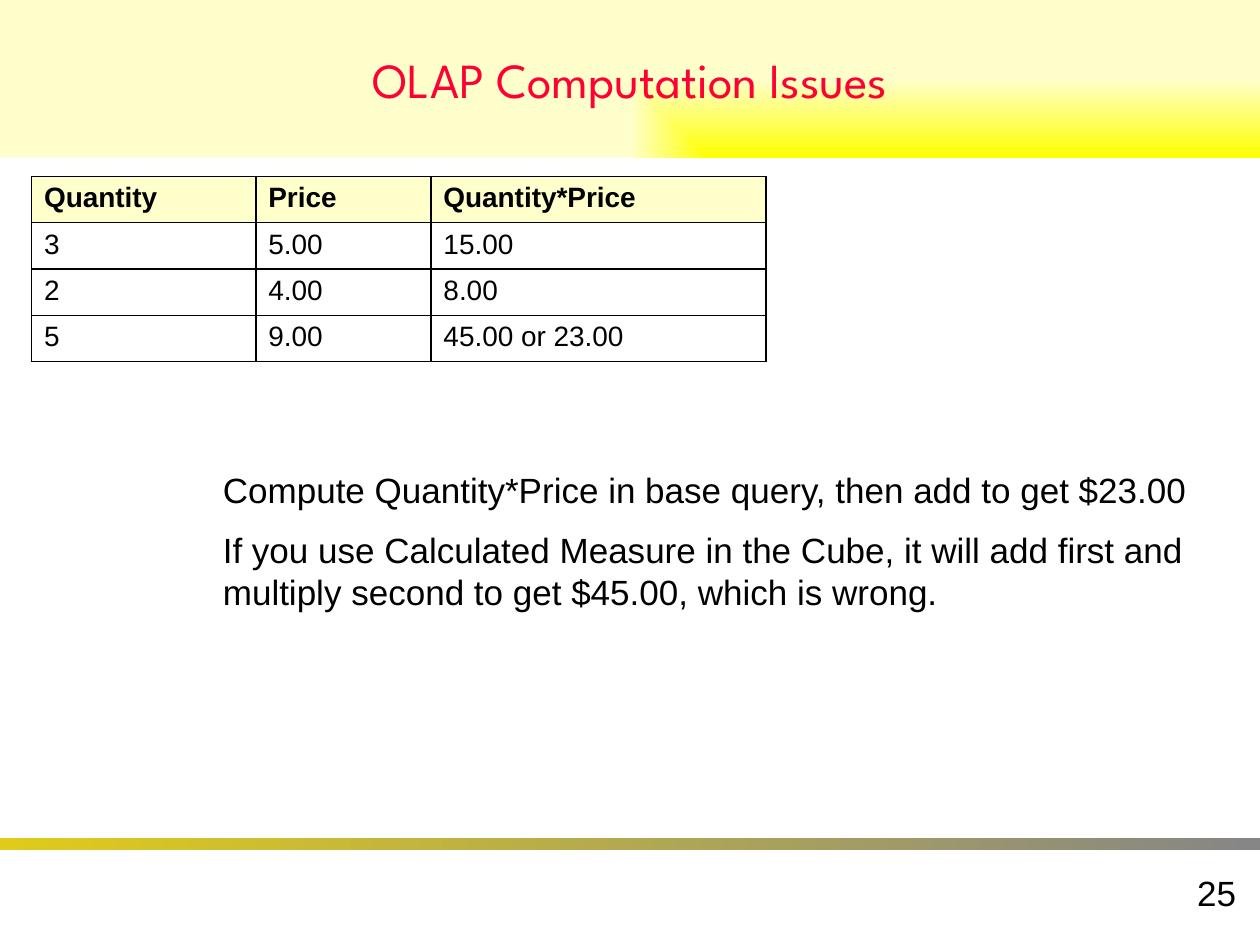
from pptx import Presentation
from pptx.dml.color import RGBColor
from pptx.enum.shapes import MSO_SHAPE as Shape
from pptx.enum.text import MSO_ANCHOR as Anchor, MSO_AUTO_SIZE as Fit, PP_ALIGN as Align
from pptx.oxml.ns import qn
from pptx.util import Inches, Pt
from lxml.etree import SubElement as Sub

COLS, ROWS = 40, 30
CELL = Inches(0.25)


def color(code):
    return RGBColor.from_string(code)


def write(frame, text, font="Arial", size=20, ink="000000", bold=False,
          align=Align.LEFT, gap=0, hang=0):
    """Fill a frame, one paragraph a line; gap is in points, hang in inches."""
    for i, line in enumerate(text.split("\n")):
        para = frame.add_paragraph() if i else frame.paragraphs[0]
        para.alignment = align
        para.space_before = Pt(gap if i else 0)
        if hang:
            props = para._p.get_or_add_pPr()
            props.set("marL", str(Inches(hang)))
            props.set("indent", str(-Inches(hang)))
        run = para.add_run()
        run.text = line
        run.font.name, run.font.size, run.font.bold = font, Pt(size), bold
        run.font.color.rgb = color(ink)


def blend(fill, first, last, corner=False):
    """Fade left to right, or outward from the bottom right corner."""
    fill.gradient()
    fill.gradient_angle = 0
    for stop, code in zip(fill.gradient_stops, (first, last)):
        stop.color.rgb = color(code)
    if corner:
        grad = fill._fill._gradFill
        grad.remove(grad.find(qn("a:lin")))
        way = Sub(grad, qn("a:path"), path="rect")
        Sub(way, qn("a:fillToRect"), l="100000", t="100000")


def border(cell, ink="000000", width=1):
    props = cell._tc.get_or_add_tcPr()
    for side in ("lnL", "lnR", "lnT", "lnB"):
        line = Sub(props, qn(f"a:{side}"), w=str(Pt(width)))
        Sub(Sub(line, qn("a:solidFill")), qn("a:srgbClr"), val=ink)


class Deck:
    """Places elements by columns and rows of the slide's grid."""
    head, pale = "FF0033", "FFFFCC"

    def __init__(self):
        self.show = Presentation()
        self.show.slide_width = COLS * CELL
        self.show.slide_height = ROWS * CELL
        self.slide = self.show.slides.add_slide(self.show.slide_layouts[5])

    def box(self, *grid):
        return [round(n * CELL) for n in grid]

    def title(self, text, *grid):
        shape = self.slide.shapes.title
        shape.left, shape.top, shape.width, shape.height = self.box(*grid)
        blend(shape.fill, "FFFF00", self.pale, corner=True)
        frame = shape.text_frame
        frame.vertical_anchor = Anchor.MIDDLE
        write(frame, text, font="League Spartan", size=28, ink=self.head,
              align=Align.CENTER)

    def bar(self, first, last, *grid):
        shape = self.slide.shapes.add_shape(Shape.RECTANGLE, *self.box(*grid))
        shape.shadow.inherit = False
        shape.line.fill.background()
        blend(shape.fill, first, last)

    def text(self, text, *grid, anchor=Anchor.TOP, wrap=True, fit=Fit.NONE, **style):
        frame = self.slide.shapes.add_textbox(*self.box(*grid)).text_frame
        frame.word_wrap, frame.vertical_anchor, frame.auto_size = wrap, anchor, fit
        write(frame, text, **style)

    def table(self, rows, widths, left, top, high):
        grid = self.box(left, top, sum(widths), high * len(rows))
        table = self.slide.shapes.add_table(len(rows), len(widths), *grid).table
        for col, wide in zip(table.columns, self.box(*widths)):
            col.width = wide
        for r, row in enumerate(rows):
            for c, value in enumerate(row):
                cell = table.cell(r, c)
                border(cell)
                if r:
                    cell.fill.background()
                else:
                    cell.fill.solid()
                    cell.fill.fore_color.rgb = color(self.pale)
                write(cell.text_frame, value, size=16, bold=r == 0, hang=0.38)


def main():
    deck = Deck()
    deck.bar("E0CB1B", "868686", 0, 26.6, COLS, 0.4)
    deck.title("OLAP Computation Issues", 0, 0, COLS, 5)
    deck.table([("Quantity", "Price", "Quantity*Price"),
                ("3", "5.00", "15.00"),
                ("2", "4.00", "8.00"),
                ("5", "9.00", "45.00 or 23.00")],
               (7.12, 5.56, 10.64), 1, 5.6, 1.47)
    deck.text("25", 31.32, 27.32, 8.32, 2, anchor=Anchor.MIDDLE, wrap=False,
              align=Align.RIGHT)
    deck.text("Compute Quantity*Price in base query, then add to get $23.00\n"
              "If you use Calculated Measure in the Cube, it will add first and "
              "multiply second to get $45.00, which is wrong.",
              6.68, 14.68, 32.32, 5.08, fit=Fit.SHAPE_TO_FIT_TEXT, gap=10)
    deck.show.save("out.pptx")


if __name__ == "__main__":
    main()
